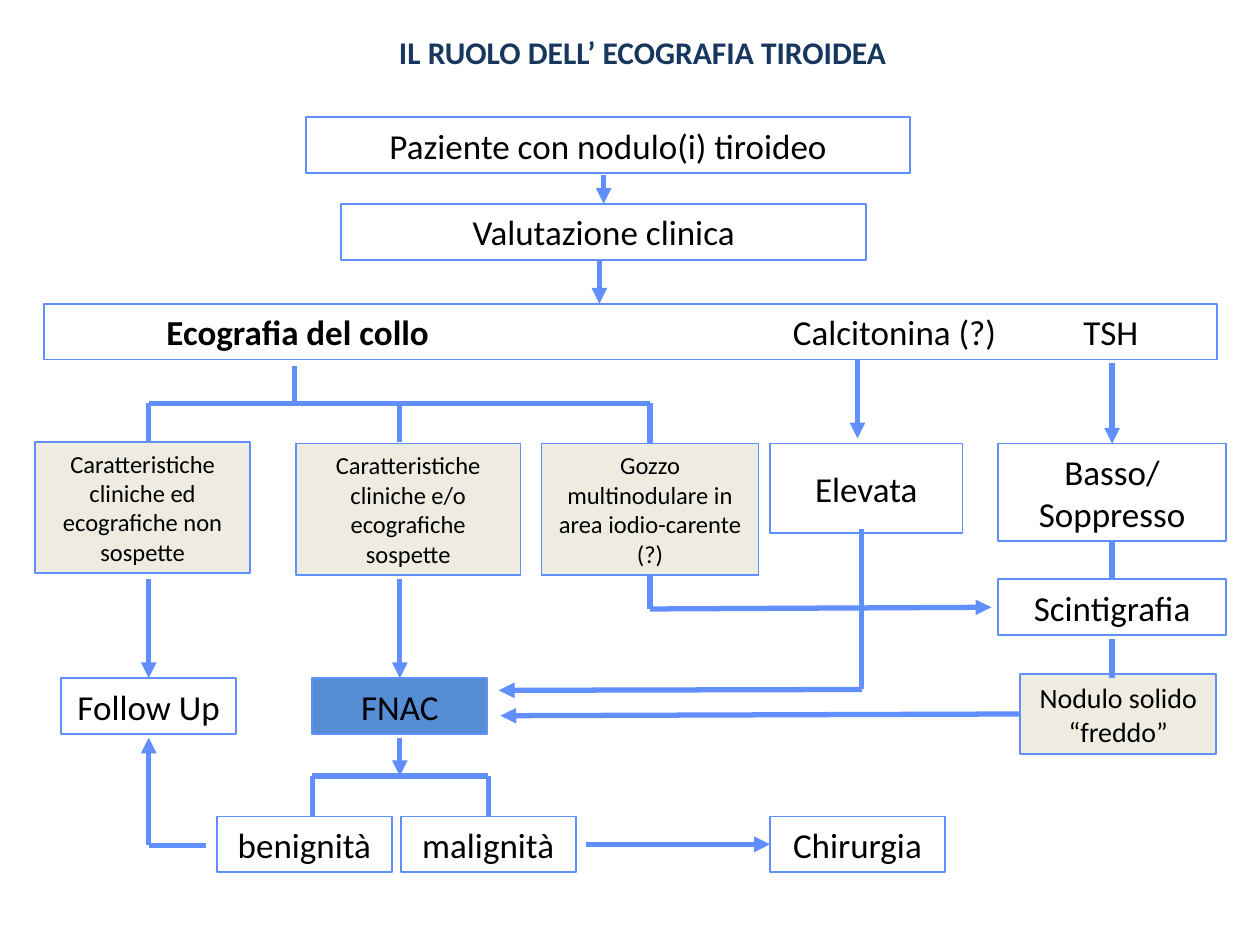
"""Build the flow chart slide on the role of thyroid ultrasound."""
from lxml import etree
from pptx import Presentation
from pptx.dml.color import RGBColor
from pptx.enum.shapes import MSO_CONNECTOR, MSO_SHAPE
from pptx.enum.text import MSO_ANCHOR, PP_ALIGN
from pptx.oxml.ns import qn
from pptx.util import Pt

STRAIGHT = MSO_CONNECTOR.STRAIGHT
RECTANGLE = MSO_SHAPE.RECTANGLE
MIDDLE = MSO_ANCHOR.MIDDLE
CENTER, LEFT = PP_ALIGN.CENTER, PP_ALIGN.LEFT

BLUE = RGBColor(0x61, 0x8F, 0xFD)
NAVY = RGBColor(0x17, 0x37, 0x5E)
BEIGE = RGBColor(0xEE, 0xEC, 0xE1)
MID_BLUE = RGBColor(0x55, 0x8E, 0xD5)
BLACK = RGBColor(0, 0, 0)
FONT = "Calibri"

TITLE = "IL RUOLO DELL’ ECOGRAFIA TIROIDEA"
TITLE_BOX = (108, 15, 518.5, 29)

ROW = 32
SMALL = 100
SIDE = 130
CARD = 75
CARD_TOP = 253.5
FNAC_TOP = 387.5
OUTCOME_TOP = 466.5

BOXES = [
    (["Paziente con nodulo(i) tiroideo"], (175, 67, 345, ROW), 20, None),
    (["Valutazione clinica"], (195, 116.5, 300, ROW), 20, None),
    (["Caratteristiche cliniche ed ecografiche non sospette"],
     (20, CARD_TOP - 1, 123, CARD), 14, BEIGE),
    (["Caratteristiche cliniche e/o ecografiche sospette"],
     (169, CARD_TOP, 128.5, CARD), 14, BEIGE),
    (["Gozzo multinodulare in area iodio-carente", "(?)"],
     (309.5, CARD_TOP, 124, CARD), 14, BEIGE),
    (["Elevata"], (440, CARD_TOP, 110, 51), 20, None),
    (["Basso/", "Soppresso"], (570.5, CARD_TOP, SIDE, 55.5), 20, None),
    (["Scintigrafia"], (570.5, 331, SIDE, ROW), 20, None),
    (["Nodulo solido", "“freddo”"], (583, 385, 112, 46), 16, BEIGE),
    (["Follow Up"], (35, FNAC_TOP, SMALL, ROW), 20, None),
    (["FNAC"], (178.5, FNAC_TOP, SMALL, ROW), 20, MID_BLUE),
    (["benignità"], (124, OUTCOME_TOP, SMALL, ROW), 20, None),
    (["malignità"], (229, OUTCOME_TOP, SMALL, ROW), 20, None),
    (["Chirurgia"], (440, OUTCOME_TOP, SMALL, ROW), 20, None),
]

EXAMS_BOX = (25, 173.5, 670.5, ROW)
EXAMS = [("Ecografia del collo", True, 63), ("Calcitonina (?)", False, 421),
         ("TSH", False, 587)]

FOLLOW_X, FNAC_X, GOITRE_X, HIGH_X, TSH_X = 85, 228.5, 371.5, 492.5, 635.5
BRANCH_Y, SPLIT_Y = 230.5, 443.5
SPLIT_LEFT, SPLIT_RIGHT = 178.5, 279

ARROWS = [
    ((345, 100), (345, 116.5)),
    ((342.5, 148), (342.5, 173.5)),
    ((490, 205), (490, 250.5)),
    ((TSH_X, 207.5), (TSH_X, CARD_TOP)),
    ((FOLLOW_X, 331), (FOLLOW_X, FNAC_TOP)),
    ((FNAC_X, 331), (FNAC_X, FNAC_TOP)),
    ((GOITRE_X, 348), (566.5, 347)),
    ((HIGH_X, 394), (285, 394.5)),
    ((583, 408), (286, 409)),
    ((FNAC_X, 421.5), (FNAC_X, SPLIT_Y)),
    ((FOLLOW_X, 483), (FOLLOW_X, 421.5)),
    ((335, 482.5), (440, 482.5)),
]

LINES = [
    ((168.5, 209), (168.5, BRANCH_Y)),
    ((FOLLOW_X, BRANCH_Y), (GOITRE_X, BRANCH_Y)),
    ((FOLLOW_X, BRANCH_Y), (FOLLOW_X, 252.5)),
    ((FNAC_X, BRANCH_Y), (FNAC_X, 252.5)),
    ((GOITRE_X, BRANCH_Y), (GOITRE_X, CARD_TOP)),
    ((GOITRE_X, 328.5), (GOITRE_X, 348)),
    ((HIGH_X, 302.5), (HIGH_X, 394)),
    ((TSH_X, 309), (TSH_X, 331)),
    ((TSH_X, 365), (TSH_X, 387.5)),
    ((SPLIT_LEFT, SPLIT_Y), (SPLIT_RIGHT, SPLIT_Y)),
    ((SPLIT_LEFT, SPLIT_Y), (SPLIT_LEFT, OUTCOME_TOP)),
    ((SPLIT_RIGHT, SPLIT_Y), (SPLIT_RIGHT, OUTCOME_TOP)),
    ((118, 483), (FOLLOW_X, 483)),
]


def add_run(paragraph, text, size, color=BLACK, bold=False):
    run = paragraph.add_run()
    run.text = text
    run.font.name = FONT
    run.font.size = Pt(size)
    run.font.bold = bold
    run.font.color.rgb = color


def add_box(slide, box, fill):
    shape = slide.shapes.add_shape(RECTANGLE, *map(Pt, box))
    shape.shadow.inherit = False
    if fill is None:
        shape.fill.background()
    else:
        shape.fill.solid()
        shape.fill.fore_color.rgb = fill
    shape.line.color.rgb = BLUE
    shape.line.width = Pt(1)
    shape.text_frame.word_wrap = True
    shape.text_frame.vertical_anchor = MIDDLE
    return shape


def add_exams(slide):
    paragraph = add_box(slide, EXAMS_BOX, None).text_frame.paragraphs[0]
    paragraph.alignment = LEFT
    for text, bold, _ in EXAMS:
        add_run(paragraph, "\t" + text, 20, bold=bold)
    properties = paragraph._p.get_or_add_pPr()
    tabs = etree.SubElement(properties, qn("a:tabLst"))
    for _, _, position in EXAMS:
        etree.SubElement(tabs, qn("a:tab"), pos=str(Pt(position)), algn="l")


def find_site(point, boxes):
    for shape, (left, top, width, height) in boxes:
        middle_x, middle_y = left + width / 2, top + height / 2
        sites = [(middle_x, top), (left, middle_y),
                 (middle_x, top + height), (left + width, middle_y)]
        if point in sites:
            return shape, sites.index(point)
    return None


def add_link(slide, start, end, boxes, arrow):
    connector = slide.shapes.add_connector(STRAIGHT, *map(Pt, start + end))
    connector.line.color.rgb = BLUE
    connector.line.width = Pt(3)
    if arrow:
        etree.SubElement(connector.line._get_or_add_ln(), qn("a:tailEnd"), type="triangle")
    etree.SubElement(connector._element.spPr, qn("a:effectLst"))
    for point, connect in ((start, connector.begin_connect), (end, connector.end_connect)):
        site = find_site(point, boxes)
        if site:
            connect(*site)


def main():
    presentation = Presentation()
    presentation.slide_width, presentation.slide_height = Pt(720), Pt(540)
    slide = presentation.slides.add_slide(presentation.slide_layouts[5])

    title = slide.shapes.title
    title.left, title.top, title.width, title.height = map(Pt, TITLE_BOX)
    title.text_frame.vertical_anchor = MIDDLE
    title.text_frame.paragraphs[0].alignment = CENTER
    add_run(title.text_frame.paragraphs[0], TITLE, 18, NAVY, True)

    add_exams(slide)
    boxes = []
    for texts, box, size, fill in BOXES:
        shape = add_box(slide, box, fill)
        boxes.append((shape, box))
        frame = shape.text_frame
        for index, text in enumerate(texts):
            paragraph = frame.add_paragraph() if index else frame.paragraphs[0]
            paragraph.alignment = CENTER
            add_run(paragraph, text, size)

    for links, arrow in ((LINES, False), (ARROWS, True)):
        for start, end in links:
            add_link(slide, start, end, boxes, arrow)
    presentation.save("out.pptx")


if __name__ == "__main__":
    main()
